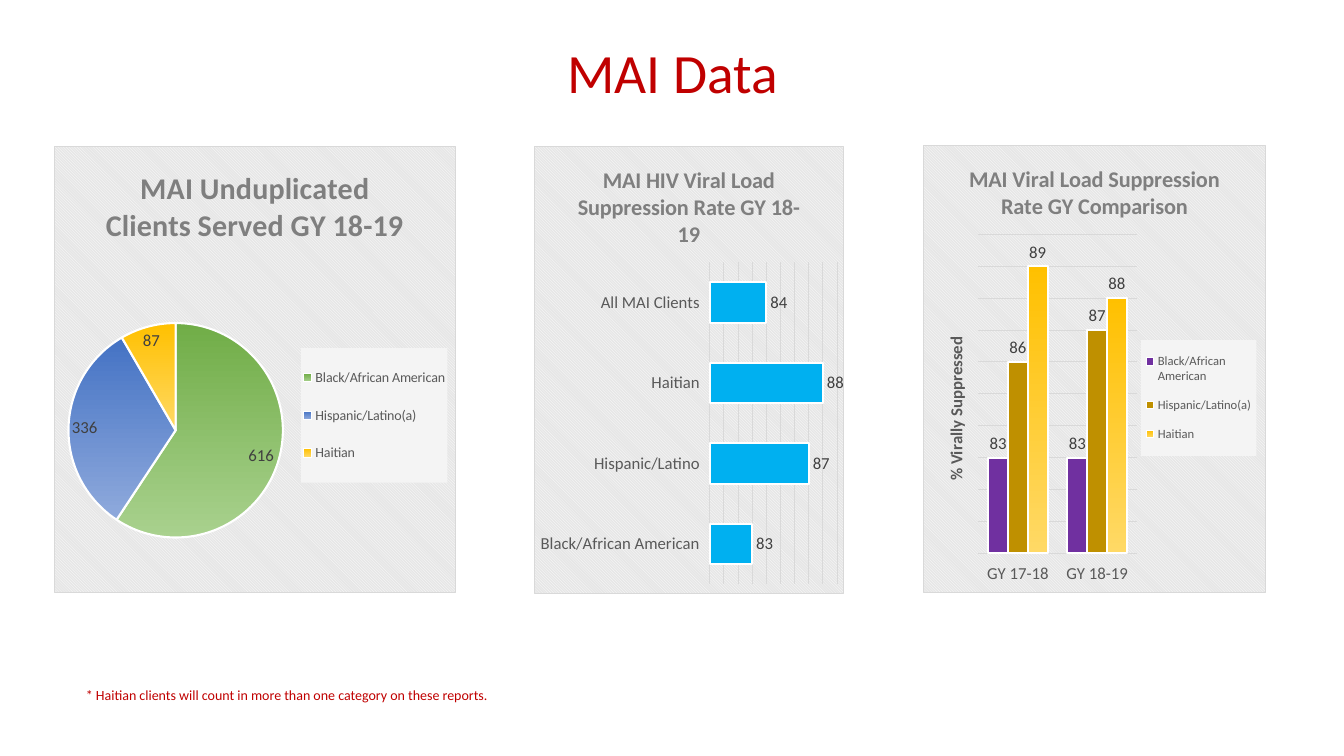
from lxml import etree
from pptx import Presentation
from pptx.chart.data import CategoryChartData
from pptx.dml.color import RGBColor
from pptx.enum.chart import XL_CHART_TYPE, XL_LABEL_POSITION, XL_LEGEND_POSITION, XL_TICK_MARK
from pptx.enum.text import MSO_ANCHOR, MSO_AUTO_SIZE, PP_ALIGN
from pptx.oxml import parse_xml
from pptx.oxml.ns import qn
from pptx.util import Emu, Pt

PIE, BAR, COLUMN = XL_CHART_TYPE.PIE, XL_CHART_TYPE.BAR_CLUSTERED, XL_CHART_TYPE.COLUMN_CLUSTERED
BEST_FIT, OUTSIDE_END = XL_LABEL_POSITION.BEST_FIT, XL_LABEL_POSITION.OUTSIDE_END
RIGHT, TICK_OUT = XL_LEGEND_POSITION.RIGHT, XL_TICK_MARK.OUTSIDE
LEFT, CENTER, MIDDLE = PP_ALIGN.LEFT, PP_ALIGN.CENTER, MSO_ANCHOR.MIDDLE
FIXED, GROW = MSO_AUTO_SIZE.NONE, MSO_AUTO_SIZE.SHAPE_TO_FIT_TEXT

FONT = "Calibri"
RED, WHITE, GREY, LABEL_GREY, TITLE_GREY = "C00000", "FFFFFF", "595959", "404040", "7F7F7F"
GRID, LEGEND_FILL = "D9D9D9", "F4F4F4"
GREEN, BLUE, GOLD = ("70AD47", "A9D18E"), ("4472C4", "8FAADC"), ("FFC000", "FFD966")
PURPLE, OCHRE, SKY = "7030A0", "BF9000", "00B0F0"

NAMESPACES = ('xmlns:c="http://schemas.openxmlformats.org/drawingml/2006/chart" '
              'xmlns:a="http://schemas.openxmlformats.org/drawingml/2006/main"')
PANEL = f"""<c:spPr {NAMESPACES}><a:pattFill prst="dkDnDiag">
<a:fgClr><a:srgbClr val="FFFFFF"/></a:fgClr><a:bgClr><a:srgbClr val="E6E6E6"/></a:bgClr></a:pattFill>
<a:ln w="9525"><a:solidFill><a:srgbClr val="{GRID}"/></a:solidFill></a:ln></c:spPr>"""
LEGEND_PANEL = f"""<c:spPr {NAMESPACES}><a:solidFill><a:srgbClr val="{LEGEND_FILL}"/></a:solidFill>
<a:ln><a:noFill/></a:ln></c:spPr>"""


def px(length):
    return Emu(round(length * 914400 / 100.8))


def rgb(value):
    return RGBColor.from_string(value)


def set_font(font, size, color, bold=False):
    font.name, font.size, font.bold = FONT, Pt(size), bold
    font.color.rgb = rgb(color)


def write_text(frame, text, size=12, color=GREY, bold=False, align=LEFT, spacing=None):
    frame.text = text
    paragraph = frame.paragraphs[0]
    paragraph.alignment, paragraph.line_spacing = align, spacing
    set_font(paragraph.runs[0].font, size, color, bold)


def paint(part, color):
    """Fill with a hex colour, or top to bottom with a pair of them; outline in white."""
    fill = part.format.fill
    if isinstance(color, tuple):
        fill.gradient()
        fill.gradient_angle = 270
        for stop, shade, position in zip(fill.gradient_stops, color, (0, 1)):
            stop.color.rgb, stop.position = rgb(shade), position
    else:
        fill.solid()
        fill.fore_color.rgb = rgb(color)
    part.format.line.color.rgb = rgb(WHITE)
    part.format.line.width = Pt(1.5)


def pin(element, chart_box, area, index, inner=False):
    """Fix a chart part at area, in slide px, with its layout as child number index."""
    for old in element.findall(qn("c:layout")):
        element.remove(old)
    layout = etree.Element(qn("c:layout"))
    manual = etree.SubElement(layout, qn("c:manualLayout"))
    left, top, width, height = chart_box
    settings = [("layoutTarget", "inner")] if inner else []
    settings += [("xMode", "edge"), ("yMode", "edge"),
                 ("x", (area[0] - left) / width), ("y", (area[1] - top) / height),
                 ("w", area[2] / width), ("h", area[3] / height)]
    for tag, value in settings:
        text = value if isinstance(value, str) else f"{value:.4f}"
        etree.SubElement(manual, qn(f"c:{tag}")).set("val", text)
    element.insert(index, layout)


def add_panel_chart(slide, kind, box, title, title_size, categories, series, plot_area):
    data = CategoryChartData()
    data.categories = categories
    for name, values in series:
        data.add_series(name, values)
    chart = slide.shapes.add_chart(kind, *map(px, box), data).chart
    set_font(chart.font, 10, "000000")
    chart.has_title, chart.has_legend = True, False
    write_text(chart.chart_title.text_frame, title, size=title_size, color=TITLE_GREY,
               bold=True, align=CENTER)
    chart.chart_title.include_in_layout = False
    space = chart.element
    space.find(qn("c:chart")).addnext(parse_xml(PANEL))
    pin(space.find(".//" + qn("c:plotArea")), box, plot_area, 0, inner=True)
    return chart


def add_legend(chart, box, area, size):
    chart.has_legend = True
    legend = chart.legend
    legend.position, legend.include_in_layout = RIGHT, False
    set_font(legend.font, size, GREY)
    element = chart.element.find(".//" + qn("c:legend"))
    pin(element, box, area, 1)
    element.find(qn("c:txPr")).addprevious(parse_xml(LEGEND_PANEL))


def show_values(plot, position):
    plot.has_data_labels = True
    labels = plot.data_labels
    labels.show_value, labels.show_percentage, labels.position = True, False, position
    set_font(labels.font, 12, LABEL_GREY)


def style_bars(chart, colors, top):
    """Format the axes, from 80 to top, and the bars of each series."""
    plot = chart.plots[0]
    plot.gap_width, plot.overlap, plot.vary_by_categories = 100, 0, False
    show_values(plot, OUTSIDE_END)
    for series, color in zip(plot.series, colors):
        paint(series, color)
        series.invert_if_negative = False
    category, value = chart.category_axis, chart.value_axis
    category.major_tick_mark = TICK_OUT
    category.format.line.fill.background()
    set_font(category.tick_labels.font, 12, GREY)
    value.minimum_scale, value.maximum_scale, value.major_unit = 80, top, 1
    value.visible, value.has_major_gridlines = False, True
    grid = value.major_gridlines.format.line
    grid.color.rgb, grid.width = rgb(GRID), Pt(0.75)


def add_clients_pie(slide):
    box = (54, 146, 402, 447)
    chart = add_panel_chart(
        slide, PIE, box, "MAI Unduplicated Clients Served GY 18-19", 21.6,
        ["Black/African American", "Hispanic/Latino(a)", "Haitian"],
        [("Series 1", (616, 336, 87))], (68, 323, 215, 215))
    plot = chart.plots[0]
    plot.vary_by_categories = True
    show_values(plot, BEST_FIT)
    for index, color in enumerate((GREEN, BLUE, GOLD)):
        paint(plot.series[0].points[index], color)
    add_legend(chart, box, (301, 348, 147, 135), 10)


def add_suppression_bars(slide):
    chart = add_panel_chart(
        slide, BAR, (534, 146, 310, 448), "MAI HIV Viral Load Suppression Rate GY 18-19", 16,
        ["Black/African American", "Hispanic/Latino", "Haitian", "All MAI Clients"],
        [("Series 1", (83, 87, 88, 84))], (710, 262, 128, 323))
    style_bars(chart, [SKY], 89)


def add_year_comparison(slide):
    box = (923, 145, 343, 448)
    chart = add_panel_chart(
        slide, COLUMN, box, "MAI Viral Load Suppression Rate GY Comparison", 16,
        ["GY 17-18", "GY 18-19"],
        [("Black/African American", (83, 83)), ("Hispanic/Latino(a)", (86, 87)),
         ("Haitian", (89, 88))], (978, 234, 159, 320))
    style_bars(chart, [PURPLE, OCHRE, GOLD], 90)
    write_text(chart.value_axis.axis_title.text_frame, "% Virally Suppressed", bold=True)
    body = chart.element.find(f".//{qn('c:valAx')}/{qn('c:title')}//{qn('a:bodyPr')}")
    body.set("rot", "-5400000")
    body.set("vert", "horz")
    add_legend(chart, box, (1141, 340, 116, 116), 9)


def add_heading(slide):
    heading = slide.shapes.title
    heading.left, heading.top, heading.width, heading.height = map(px, (93, 40, 1159, 71))
    frame = heading.text_frame
    frame.auto_size, frame.vertical_anchor = FIXED, MIDDLE
    write_text(frame, "MAI Data", size=39.6, color=RED, align=CENTER, spacing=0.9)


def add_footnote(slide):
    frame = slide.shapes.add_textbox(*map(px, (76, 682, 433, 27))).text_frame
    frame.word_wrap, frame.auto_size = True, GROW
    write_text(frame, "* Haitian clients will count in more than one category on these reports.",
               size=10, color=RED)


def main():
    deck = Presentation()
    deck.slide_width, deck.slide_height = px(1344), px(756)
    slide = deck.slides.add_slide(deck.slide_layouts[5])
    add_clients_pie(slide)
    add_heading(slide)
    add_footnote(slide)
    add_suppression_bars(slide)
    add_year_comparison(slide)
    deck.save("out.pptx")


if __name__ == "__main__":
    main()
